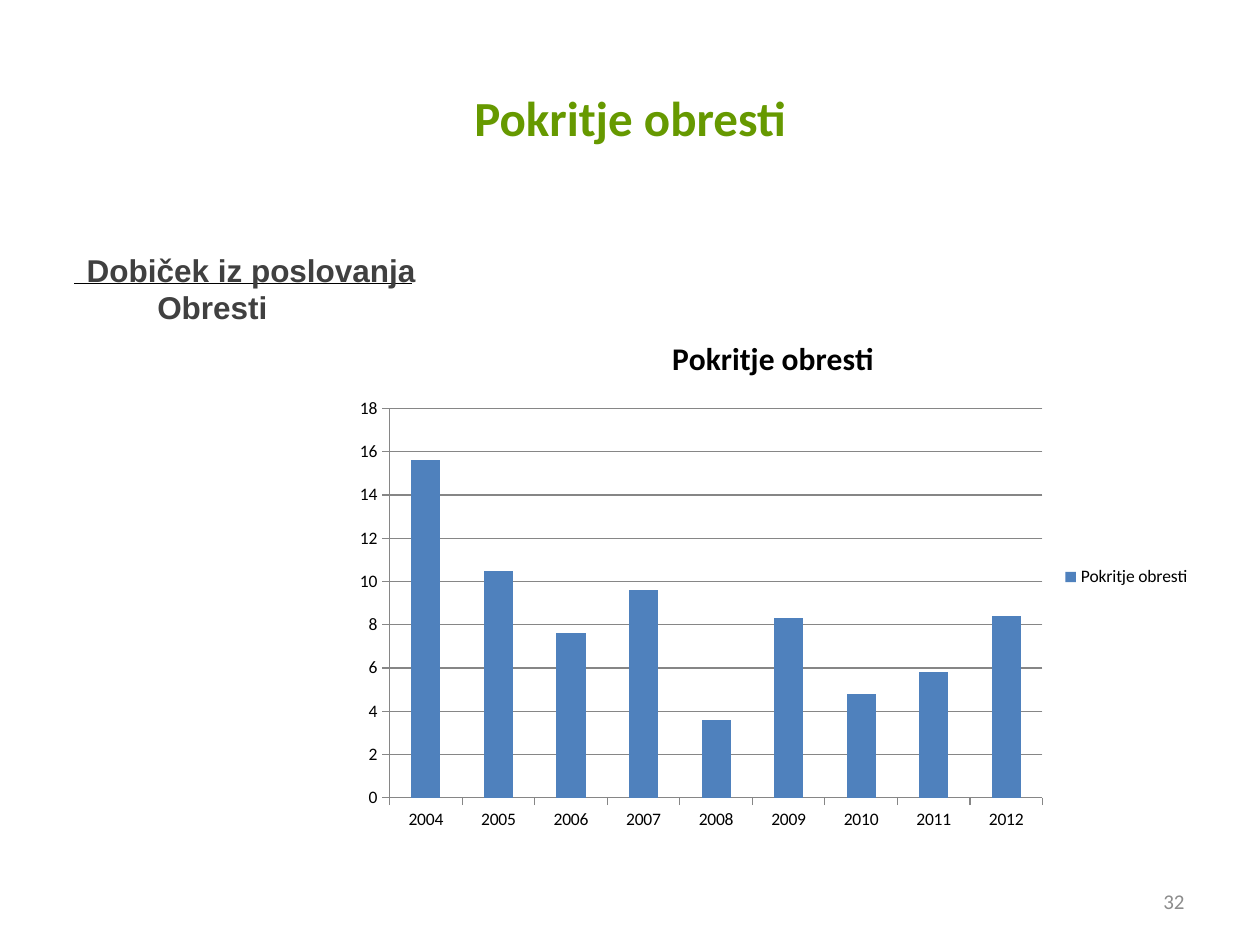
import pptx
import pptx.util
import pptx.dml.color
import pptx.chart.data
import pptx.enum.chart
import pptx.enum.shapes
import pptx.enum.text
import pptx.oxml

Inch, Pt = pptx.util.Inches, pptx.util.Pt
RGB = pptx.dml.color.RGBColor
Align, Anchor = pptx.enum.text.PP_ALIGN, pptx.enum.text.MSO_ANCHOR
Tick = pptx.enum.chart.XL_TICK_MARK

GREEN = RGB(0x66, 0x99, 0x00)
DARK = RGB(0x40, 0x40, 0x40)
GRAY = RGB(0x8C, 0x8C, 0x8C)
BLACK = RGB(0, 0, 0)
BLUE = RGB(0x4F, 0x81, 0xBD)
AXIS = RGB(0x86, 0x86, 0x86)

TITLE = "Pokritje obresti"
RATIO = [("Dobiček iz poslovanja", 0), ("Obresti", 0.56)]  # text, indent
PAGE = "32"
YEARS = [str(year) for year in range(2004, 2013)]
COVER = [15.6, 10.5, 7.6, 9.6, 3.6, 8.3, 4.8, 5.8, 8.4]

FONTS = {
    "title": dict(name="Calibri", size=Pt(28), bold=True, color=GREEN),
    "ratio": dict(name="Arial", size=Pt(18), bold=True, color=DARK),
    "page": dict(name="Calibri", size=Pt(12), bold=False, color=GRAY),
    "chart": dict(name="Calibri", size=Pt(10), bold=False, color=BLACK),
    "head": dict(name="Calibri", size=Pt(18), bold=True, color=BLACK),
}
BOXES = {
    "title": (0.5, 0.3, 9, 1.25),
    "ratio": (0.59, 1.94, 2.84, 1.31),
    "page": (7.17, 6.95, 2.33, 0.4),
    "chart": (2.72, 2.49, 6.83, 4.18),
}
RULE = (0.59, 2.25, 3.27, 2.25)


def place(key):
    return [Inch(part) for part in BOXES[key]]


def style(font, key):
    for name, value in FONTS[key].items():
        if name == "color":
            font.color.rgb = value
        else:
            setattr(font, name, value)


def write(para, text, key, align=Align.LEFT):
    para.alignment = align
    run = para.add_run()
    run.text = text
    style(run.font, key)


def add_title(slide):
    title = slide.shapes.title
    title.left, title.top, title.width, title.height = place("title")
    title.text_frame.vertical_anchor = Anchor.MIDDLE
    write(title.text_frame.paragraphs[0], TITLE, "title", Align.CENTER)


def add_page(slide):
    frame = slide.shapes.add_textbox(*place("page")).text_frame
    frame.word_wrap = True
    frame.vertical_anchor = Anchor.MIDDLE
    write(frame.paragraphs[0], PAGE, "page", Align.RIGHT)


def add_ratio(slide):
    """Draw the fraction: its rule, then the lines above and below it."""
    rule = slide.shapes.add_connector(
        pptx.enum.shapes.MSO_CONNECTOR.STRAIGHT, *map(Inch, RULE))
    rule.line.color.rgb = BLACK
    rule.line.width = Pt(0.75)
    pptx.oxml.xmlchemy.OxmlElement
    rule._element.spPr.append(pptx.oxml.xmlchemy.OxmlElement("a:effectLst"))
    frame = slide.shapes.add_textbox(*place("ratio")).text_frame
    frame.word_wrap = False
    for row, (text, indent) in enumerate(RATIO):
        para = frame.add_paragraph() if row else frame.paragraphs[0]
        para._p.get_or_add_pPr().set("marL", str(Inch(indent)))
        write(para, text, "ratio")


def add_chart(slide):
    data = pptx.chart.data.CategoryChartData(number_format="0")
    data.categories = YEARS
    data.add_series(TITLE, COVER)
    kind = pptx.enum.chart.XL_CHART_TYPE.COLUMN_CLUSTERED
    chart = slide.shapes.add_chart(kind, *place("chart"), data).chart
    style(chart.font, "chart")
    write(chart.chart_title.text_frame.paragraphs[0], TITLE, "head",
          Align.CENTER)
    chart.has_legend = True
    chart.legend.position = pptx.enum.chart.XL_LEGEND_POSITION.RIGHT
    chart.legend.include_in_layout = False

    plot = chart.plots[0]
    plot.gap_width = 150
    plot.vary_by_categories = False
    fill = plot.series[0].format.fill
    fill.solid()
    fill.fore_color.rgb = BLUE

    value = chart.value_axis
    value.has_major_gridlines = True
    for name, limit in dict(minimum_scale=0, maximum_scale=18,
                            major_unit=2).items():
        setattr(value, name, limit)
    for axis in (chart.category_axis, value):
        axis.major_tick_mark = Tick.OUTSIDE
        axis.minor_tick_mark = Tick.NONE
    for part in (chart.category_axis, value, value.major_gridlines):
        part.format.line.color.rgb = AXIS
        part.format.line.width = Pt(0.75)


def main():
    deck = pptx.Presentation()
    deck.slide_width, deck.slide_height = Inch(10), Inch(7.5)
    slide = deck.slides.add_slide(deck.slide_layouts[5])
    for add in (add_title, add_page, add_ratio, add_chart):
        add(slide)
    deck.save("out.pptx")


if __name__ == "__main__":
    main()
